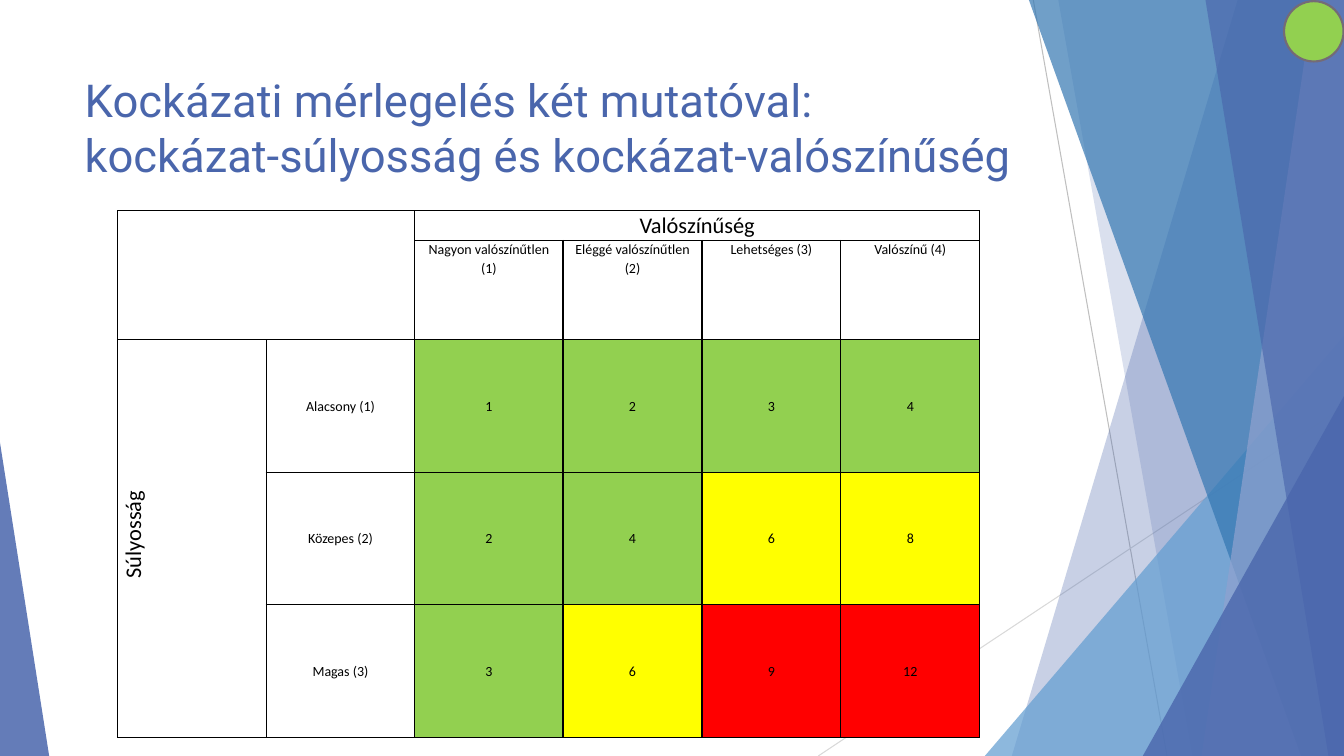
import pptx
import pptx.util
import pptx.dml.color
import pptx.enum.shapes
import pptx.enum.text
import pptx.oxml
import pptx.oxml.ns
from lxml import etree

Cm, Pt = pptx.util.Cm, pptx.util.Pt
RGB = pptx.dml.color.RGBColor.from_string
SHAPE = pptx.enum.shapes.MSO_SHAPE
ANCHOR = pptx.enum.text.MSO_ANCHOR
ALIGN = pptx.enum.text.PP_ALIGN
qn = pptx.oxml.ns.qn

THEME = {
    "blue": "4A66AC", "sky": "629DD1", "steel": "3477B2", "pale": "90A2CF",
    "grey": "BFBFBF", "light grey": "D9D9D9", "badge line": "746B76", "text": "000000",
    "low": "92D050", "medium": "FFFF00", "high": "FF0000",
    "title font": "Roboto", "table font": "Calibri",
    "title size": 32.4, "heading size": 16, "cell size": 10,
}
W, H = 33.87, 19.05


def paint(sp, colour, opacity):
    """Fill a shape with a see-through colour and no outline."""
    sp.shadow.inherit = False
    sp.line.fill.background()
    sp.fill.solid()
    sp.fill.fore_color.rgb = RGB(THEME[colour])
    clr = sp.fill._xPr.find(qn("a:solidFill"))[0]
    etree.SubElement(clr, qn("a:alpha")).set("val", str(opacity * 1000))


def write(cell, text, size="cell size", anchor=ANCHOR.MIDDLE):
    cell.vertical_anchor = anchor
    p = cell.text_frame.paragraphs[0]
    p.alignment = ALIGN.CENTER
    p.line_spacing = 1.07
    r = p.add_run()
    r.text = text
    for name, value in {"name": THEME["table font"], "size": Pt(THEME[size])}.items():
        setattr(r.font, name, value)
    r.font.color.rgb = RGB(THEME["text"])


prs = pptx.Presentation()
prs.slide_width, prs.slide_height = Cm(W), Cm(H)
s = prs.slides.add_slide(prs.slide_layouts[5])

# Background lines
for x1, y1, x2, y2, colour in [(26.04, 0, 29.41, H, "grey"), (W, 10.24, 20.62, H, "light grey")]:
    line = s.shapes.add_connector(pptx.enum.shapes.MSO_CONNECTOR.STRAIGHT,
                                  Cm(x1), Cm(y1), Cm(x2), Cm(y2))
    line.line.color.rgb = RGB(THEME[colour])
    line.line.width = Pt(0.75)
    etree.SubElement(line._element.spPr, qn("a:effectLst"))

# Background facets, back to front: bands have a top and a bottom x and reach the right edge,
# triangles have left, top, width and apex position
facets = [
    ("band", (31.19, 25.5), "blue", 30),
    ("band", (26.67, 30.05), "blue", 20),
    ("triangle", (24.82, 8.46, 9.05, 1), "sky", 72),
    ("band", (25.93, 32.79), "steel", 70),
    ("band", (33.1, 30.28), "pale", 70),
    ("band", (30.38, 33.48), "blue", 65),
    ("triangle", (28.8, 9.98, 5.07, 1), "blue", 80),
    ("triangle", (0, 11.15, 1.24, 0), "blue", 85),
]
for kind, place, colour, opacity in facets:
    if kind == "band":
        top_x, bottom_x = place
        fb = s.shapes.build_freeform(Cm(top_x), 0)
        fb.add_line_segments([(Cm(W), 0), (Cm(W), Cm(H)), (Cm(bottom_x), Cm(H))], close=True)
        sp = fb.convert_to_shape()
    else:
        left, top, width, apex = place
        sp = s.shapes.add_shape(SHAPE.ISOSCELES_TRIANGLE, Cm(left), Cm(top), Cm(width), Cm(H - top))
        sp.adjustments[0] = apex
    paint(sp, colour, opacity)

# Title
title = s.shapes.title
title.left, title.top, title.width, title.height = Cm(1.88), Cm(1.7), Cm(23.88), Cm(3.66)
tf = title.text_frame
for name, value in {"word_wrap": True, "vertical_anchor": ANCHOR.TOP,
                    "auto_size": pptx.enum.text.MSO_AUTO_SIZE.NONE}.items():
    setattr(tf, name, value)
p = tf.paragraphs[0]
p.alignment = ALIGN.LEFT
r = p.add_run()
r.text = "Kockázati mérlegelés két mutatóval: kockázat-súlyosság és kockázat-valószínűség"
for name, value in {"name": THEME["title font"], "size": Pt(THEME["title size"])}.items():
    setattr(r.font, name, value)
r.font.color.rgb = RGB(THEME["blue"])

# Badge
badge = s.shapes.add_shape(SHAPE.OVAL, Cm(32.36), Cm(0.03), Cm(1.5), Cm(1.52))
badge.shadow.inherit = False
badge.fill.solid()
badge.fill.fore_color.rgb = RGB(THEME["low"])
badge.line.color.rgb = RGB(THEME["badge line"])
badge.line.width = Pt(1.5)

# Risk matrix
col_widths = [3.74] * 3 + [3.5] * 3
row_heights = [0.75, 2.5] + [3.34] * 3
tbl = s.shapes.add_table(len(row_heights), len(col_widths), Cm(2.97), Cm(5.31),
                         Cm(sum(col_widths)), Cm(sum(row_heights))).table
tbl.first_row = tbl.horz_banding = False
for col, width in zip(tbl.columns, col_widths):
    col.width = Cm(width)
for row, height in zip(tbl.rows, row_heights):
    row.height = Cm(height)

for cell in tbl.iter_cells():
    for name, value in {"margin_left": Cm(0.18), "margin_right": Cm(0.18),
                        "margin_top": 0, "margin_bottom": 0}.items():
        setattr(cell, name, value)
    tcPr = cell._tc.get_or_add_tcPr()
    for side in ("lnL", "lnR", "lnT", "lnB"):
        ln = etree.SubElement(tcPr, qn("a:" + side), w=str(Pt(1)))
        fill = etree.SubElement(ln, qn("a:solidFill"))
        etree.SubElement(fill, qn("a:srgbClr"), val=THEME["text"])
    cell.fill.background()

for top, left, bottom, right in [(0, 0, 1, 1), (0, 2, 0, 5), (2, 0, 4, 0)]:
    tbl.cell(top, left).merge(tbl.cell(bottom, right))

write(tbl.cell(0, 2), "Valószínűség", "heading size", ANCHOR.TOP)
severity = tbl.cell(2, 0)
write(severity, "Súlyosság", "heading size", ANCHOR.TOP)
severity._tc.tcPr.set("vert", "vert270")
severity.text_frame.paragraphs[0]._p.get_or_add_pPr().set("marL", str(Cm(0.2)))

likelihoods = ["Nagyon valószínűtlen", "Eléggé valószínűtlen", "Lehetséges", "Valószínű"]
severities = ["Alacsony", "Közepes", "Magas"]
for j, label in enumerate(likelihoods, 1):
    write(tbl.cell(1, j + 1), f"{label} ({j})", anchor=ANCHOR.TOP)
for i, label in enumerate(severities, 1):
    write(tbl.cell(i + 1, 1), f"{label} ({i})")
    for j in range(1, len(likelihoods) + 1):
        risk = i * j
        level = "high" if risk > 8 else "medium" if risk > 4 else "low"
        cell = tbl.cell(i + 1, j + 1)
        write(cell, str(risk))
        cell.fill.solid()
        cell.fill.fore_color.rgb = RGB(THEME[level])

prs.save("out.pptx")
